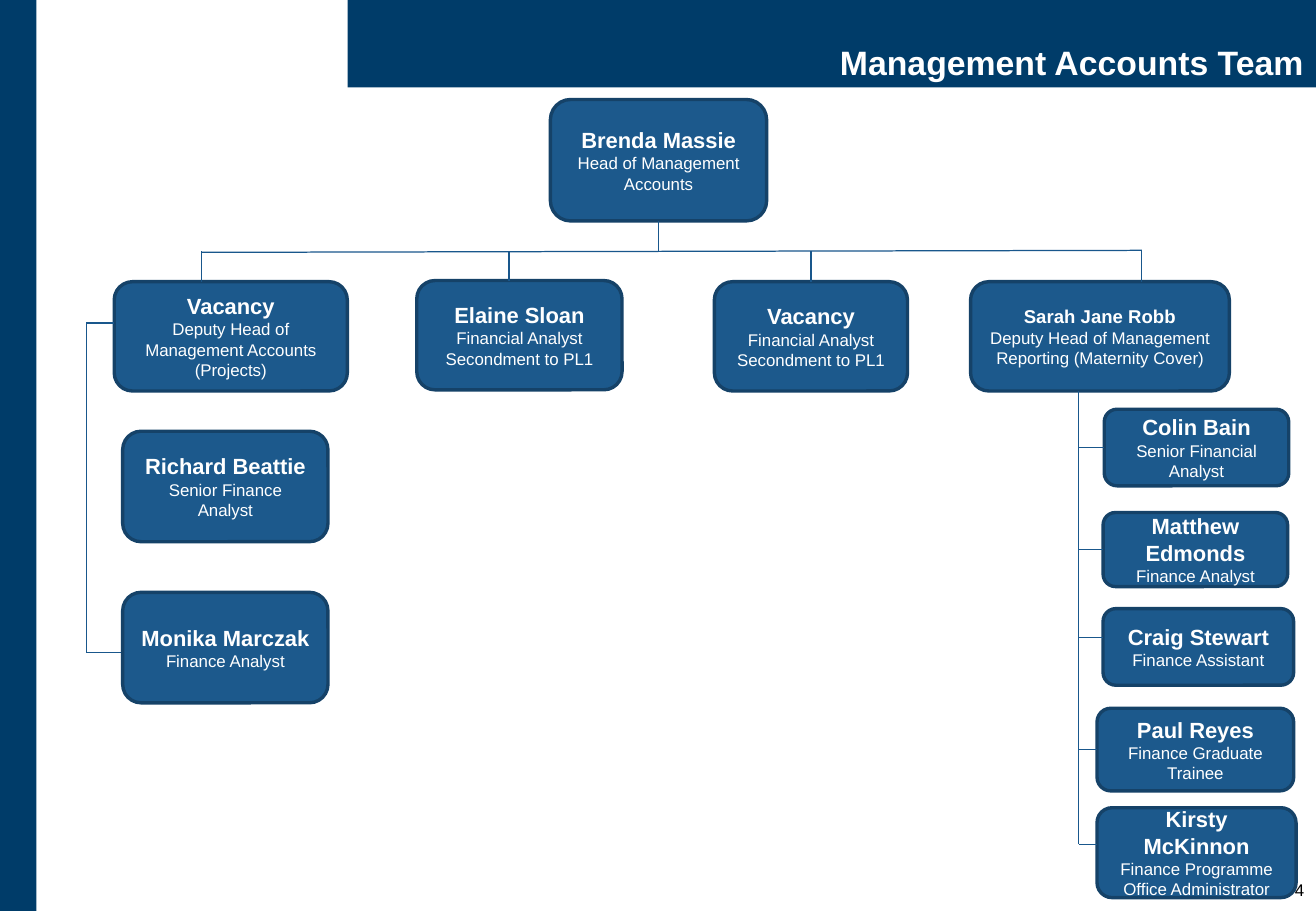
from lxml.etree import SubElement
from pptx import Presentation
from pptx.dml.color import RGBColor
from pptx.enum.shapes import MSO_CONNECTOR, MSO_SHAPE
from pptx.enum.text import MSO_ANCHOR, PP_ALIGN
from pptx.oxml.ns import qn
from pptx.util import Pt

NAVY = RGBColor(0x00, 0x3C, 0x69)
BOX_FILL = RGBColor(0x1C, 0x59, 0x8C)
BOX_LINE = RGBColor(0x15, 0x42, 0x68)
LINK = RGBColor(0x19, 0x57, 0x8C)
WHITE = RGBColor(0xFF, 0xFF, 0xFF)
BLACK = RGBColor(0x00, 0x00, 0x00)

FONT = "Arial"
SLIDE_WIDTH, SLIDE_HEIGHT = 780, 540
TOP, LEFT, BOTTOM = 0, 1, 2


def style_paragraph(paragraph, size, color, align, bold=False):
    paragraph.alignment = align
    paragraph.font.name = FONT
    paragraph.font.size = Pt(size)
    paragraph.font.bold = bold
    paragraph.font.color.rgb = color


def add_bar(slide, left, top, width, height):
    shape = slide.shapes.add_shape(
        MSO_SHAPE.RECTANGLE, Pt(left), Pt(top), Pt(width), Pt(height))
    shape.shadow.inherit = False
    shape.fill.solid()
    shape.fill.fore_color.rgb = NAVY
    shape.line.fill.background()
    return shape


def add_person(slide, left, top, width, height, name, *roles, name_size=13):
    shape = slide.shapes.add_shape(
        MSO_SHAPE.ROUNDED_RECTANGLE, Pt(left), Pt(top), Pt(width), Pt(height))
    shape.shadow.inherit = False
    shape.fill.solid()
    shape.fill.fore_color.rgb = BOX_FILL
    shape.line.color.rgb = BOX_LINE
    shape.line.width = Pt(2)
    frame = shape.text_frame
    frame.word_wrap = True
    frame.vertical_anchor = MSO_ANCHOR.MIDDLE
    frame.text = "\n".join((name, *roles))
    for index, paragraph in enumerate(frame.paragraphs):
        is_name = index == 0
        style_paragraph(paragraph, name_size if is_name else 10, WHITE,
                        PP_ALIGN.CENTER, bold=is_name)
    return shape


def add_link(slide, x1, y1, x2, y2):
    connector = slide.shapes.add_connector(
        MSO_CONNECTOR.STRAIGHT, Pt(x1), Pt(y1), Pt(x2), Pt(y2))
    connector.line.color.rgb = LINK
    connector.line.width = Pt(0.75)
    SubElement(connector._element.spPr, qn("a:effectLst"))
    return connector


def add_frame(slide, left, top, width, height):
    # Side bar and title bar
    add_bar(slide, left, top, 21.6, height)
    title = add_bar(slide, left + 206, top, width - 206, 51.8)
    frame = title.text_frame
    frame.word_wrap = True
    frame.vertical_anchor = MSO_ANCHOR.BOTTOM
    frame.margin_top = frame.margin_bottom = Pt(3)
    frame.text = "Management Accounts Team"
    paragraph = frame.paragraphs[0]
    style_paragraph(paragraph, 20, WHITE, PP_ALIGN.RIGHT, bold=True)
    paragraph.line_spacing = 0.9

    # Page number
    number = slide.shapes.add_textbox(
        Pt(left + width - 63), Pt(top + height - 22.3), Pt(63), Pt(22.3))
    number.text_frame.word_wrap = True
    number.text_frame.text = "4"
    style_paragraph(number.text_frame.paragraphs[0], 10, BLACK, PP_ALIGN.RIGHT)


def add_leaders(slide, left, top, width):
    # Head of the team
    head = add_person(slide, left + 258.5, top, 128.2, 72,
                      "Brenda Massie", "Head of Management Accounts")
    bus_top = top + 90
    stem_x = left + 258.5 + 64.1
    add_link(slide, stem_x, top + 72, stem_x, bus_top).begin_connect(head, BOTTOM)

    # Direct reports: offset, shift, width, stem position, joined, name size, text
    row_top, row_height = top + 108, 64.8
    secondment = ("Financial Analyst", "Secondment to PL1")
    reports = [
        (0, 0, 138.2, 51.8, False, 13, "Vacancy",
         "Deputy Head of Management Accounts (Projects)"),
        (179.3, -0.7, 121.7, 234, False, 13, "Elaine Sloan", *secondment),
        (355.7, 0, 114.5, 412.95, True, 13, "Vacancy", *secondment),
        (507.6, 0, width - 507.6, 609.1, False, 11, "Sarah Jane Robb",
         "Deputy Head of Management Reporting (Maternity Cover)"),
    ]
    for offset, shift, box_width, stem, joined, size, name, *roles in reports:
        box_top = row_top + shift
        box = add_person(slide, left + offset, box_top, box_width, row_height,
                         name, *roles, name_size=size)
        link = add_link(slide, left + stem, bus_top, left + stem, box_top)
        if joined:
            link.end_connect(box, TOP)

    # Shared line above the direct reports
    add_link(slide, left + 51.8, bus_top + 0.6, left + 609.1, bus_top - 0.6)


def add_projects_branch(slide, left, top):
    trunk_bottom = top + 195.2
    add_link(slide, left, top, left, trunk_bottom)
    add_link(slide, left, top, left + 16.6, top)
    add_link(slide, left, trunk_bottom, left + 21.6, trunk_bottom)
    people = [("Richard Beattie", "Senior Finance Analyst"),
              ("Monika Marczak", "Finance Analyst")]
    for index, (name, role) in enumerate(people):
        add_person(slide, left + 21.6, top + 64.1 + index * 95.5, 121.7, 65.5,
                   name, role)


def add_reporting_branch(slide, left, top):
    add_link(slide, left, top, left, top + 268.6)
    # Offset, top, width, height, link height (None joins the middle)
    people = [
        (15.1, 10.8, 109.4, 45.4, None, "Colin Bain", "Senior Financial Analyst"),
        (14.4, 72, 109.4, 43.9, None, "Matthew Edmonds", "Finance Analyst"),
        (14.4, 129, 113, 45.4, 146.2, "Craig Stewart", "Finance Assistant"),
        (10.8, 188, 116.6, 49, None, "Paul Reyes", "Finance Graduate Trainee"),
        (10.8, 247, 118, 53.3, 268.6, "Kirsty McKinnon",
         "Finance Programme Office Administrator"),
    ]
    for offset, box_top, width, height, link_y, name, role in people:
        box = add_person(slide, left + offset, top + box_top, width, height,
                         name, role)
        y = top + (box_top + height / 2 if link_y is None else link_y)
        link = add_link(slide, left, y, left + offset, y)
        if link_y is None:
            link.end_connect(box, LEFT)


def main():
    presentation = Presentation()
    presentation.slide_width = Pt(SLIDE_WIDTH)
    presentation.slide_height = Pt(SLIDE_HEIGHT)
    slide = presentation.slides.add_slide(presentation.slide_layouts[6])
    add_frame(slide, 0, 0, SLIDE_WIDTH, SLIDE_HEIGHT)
    add_leaders(slide, 67.7, 59, 661)
    add_projects_branch(slide, 51.1, 191.5)
    add_reporting_branch(slide, 639.4, 231.8)
    presentation.save("out.pptx")


if __name__ == "__main__":
    main()
